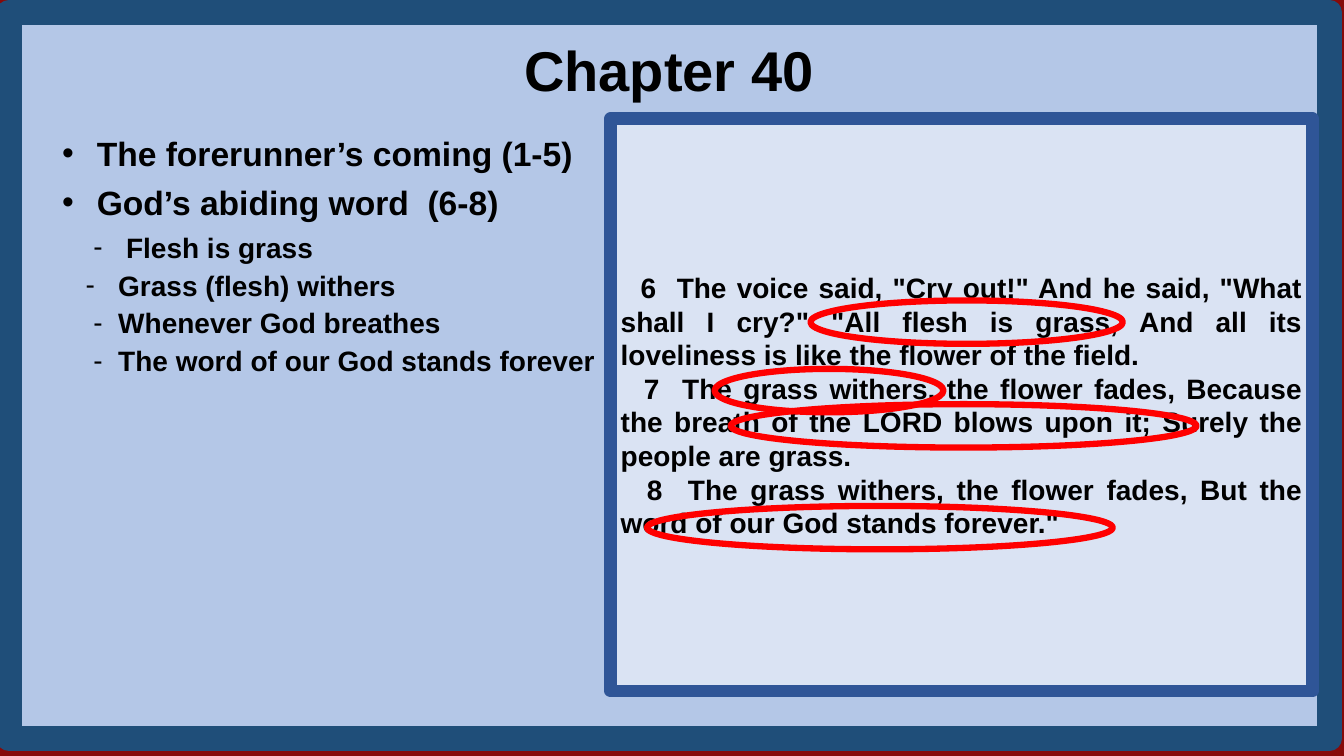
from pptx import Presentation
from pptx.dml.color import RGBColor
from pptx.enum.shapes import MSO_SHAPE as Shape
from pptx.enum.text import MSO_ANCHOR as Anchor, PP_ALIGN as Align
from pptx.oxml.ns import qn
from pptx.util import Pt
from lxml.etree import SubElement

TITLE = "Chapter 40"
POINTS = [
    {"text": "The forerunner’s coming (1-5)", "bullet": "•", "start": 0, "margin": 24.7, "size": 24, "after": 6},
    {"text": "God’s abiding word  (6-8)", "bullet": "•", "start": 0, "margin": 24.7, "size": 24, "after": 6},
    {"text": "Flesh is grass", "bullet": "-", "start": 22.2, "margin": 45.6},
    {"text": "Grass (flesh) withers", "bullet": "-", "start": 16.7, "margin": 40},
    {"text": "Whenever God breathes", "bullet": "-", "start": 22.2, "margin": 40},
    {"text": "The word of our God stands forever", "bullet": "-", "start": 22.2, "margin": 40},
]
VERSES = [
    ("6  The voice said, \"Cry out!\" And he said, \"What shall I cry?\" "
     "\"All flesh is grass, And all its loveliness is like the flower of the field.", 14.3),
    ("7  The grass withers, the flower fades, Because the breath of the LORD "
     "blows upon it; Surely the people are grass.", 16.6),
    ("8  The grass withers, the flower fades, But the word of our God stands forever.\"", 18.7),
]
RING_HEIGHT = 31
RINGS = [(578.9, 214.6, 223.2), (462.2, 361.4, 332.6), (510.5, 263.5, 163.4), (522, 288.7, 332.6)]


def color(code):
    return RGBColor.from_string(code)


def add_text(frame, text, size=20, align=Align.LEFT, after=0, bullet=None, start=0, margin=0):
    para = frame.paragraphs[0]
    if para.runs:
        para = frame.add_paragraph()
    para.alignment = align
    para.space_before = Pt(0)
    para.space_after = Pt(after)
    props = para._p.get_or_add_pPr()
    props.set("marL", str(Pt(margin)))
    props.set("indent", str(Pt(start - margin)))
    if bullet:
        font = SubElement(props, qn("a:buFont"))
        font.set("typeface", "Arial")
        SubElement(props, qn("a:buChar")).set("char", bullet)
    span = para.add_run()
    span.text = text
    span.font.name = "Arial"
    span.font.size = Pt(size)
    span.font.bold = True
    span.font.color.rgb = color("000000")


def add_shape(kind, left, top, width, height, line, weight, fill=None):
    shape = page.shapes.add_shape(kind, Pt(left), Pt(top), Pt(width), Pt(height))
    shape.shadow.inherit = False
    if fill:
        shape.fill.solid()
        shape.fill.fore_color.rgb = color(fill)
    else:
        shape.fill.background()
    shape.line.color.rgb = color(line)
    shape.line.width = Pt(weight)
    return shape


deck = Presentation()
deck.slide_width, deck.slide_height = Pt(960), Pt(540)
page = deck.slides.add_slide(deck.slide_layouts[5])
page.background.fill.solid()
page.background.fill.fore_color.rgb = color("860A0A")

add_shape(Shape.RECTANGLE, 6.5, 8.9, 943.2, 518.4, "1F4E79", 18, "B4C7E7")

passage = add_shape(Shape.RECTANGLE, 436.3, 84.7, 501.1, 409, "2F5597", 9, "DAE3F3").text_frame
passage.word_wrap = True
passage.vertical_anchor = Anchor.MIDDLE
for verse, first_line in VERSES:
    add_text(passage, verse, align=Align.JUSTIFY, start=first_line)

outline = page.shapes.add_textbox(Pt(37.4), Pt(91.4), Pt(398.9), Pt(211)).text_frame
outline.word_wrap = True
for point in POINTS:
    add_text(outline, **{"after": 3, **point})

title = page.shapes.title
title.left, title.top, title.width, title.height = Pt(18.7), Pt(21.6), Pt(918), Pt(55.4)
title.text_frame.word_wrap = True
title.text_frame.vertical_anchor = Anchor.TOP
add_text(title.text_frame, TITLE, size=40, align=Align.CENTER, after=5)
page.shapes._spTree.append(title._element)

for left, top, width in RINGS:
    add_shape(Shape.OVAL, left, top, width, RING_HEIGHT, "FF0000", 4.5)

deck.save("out.pptx")
